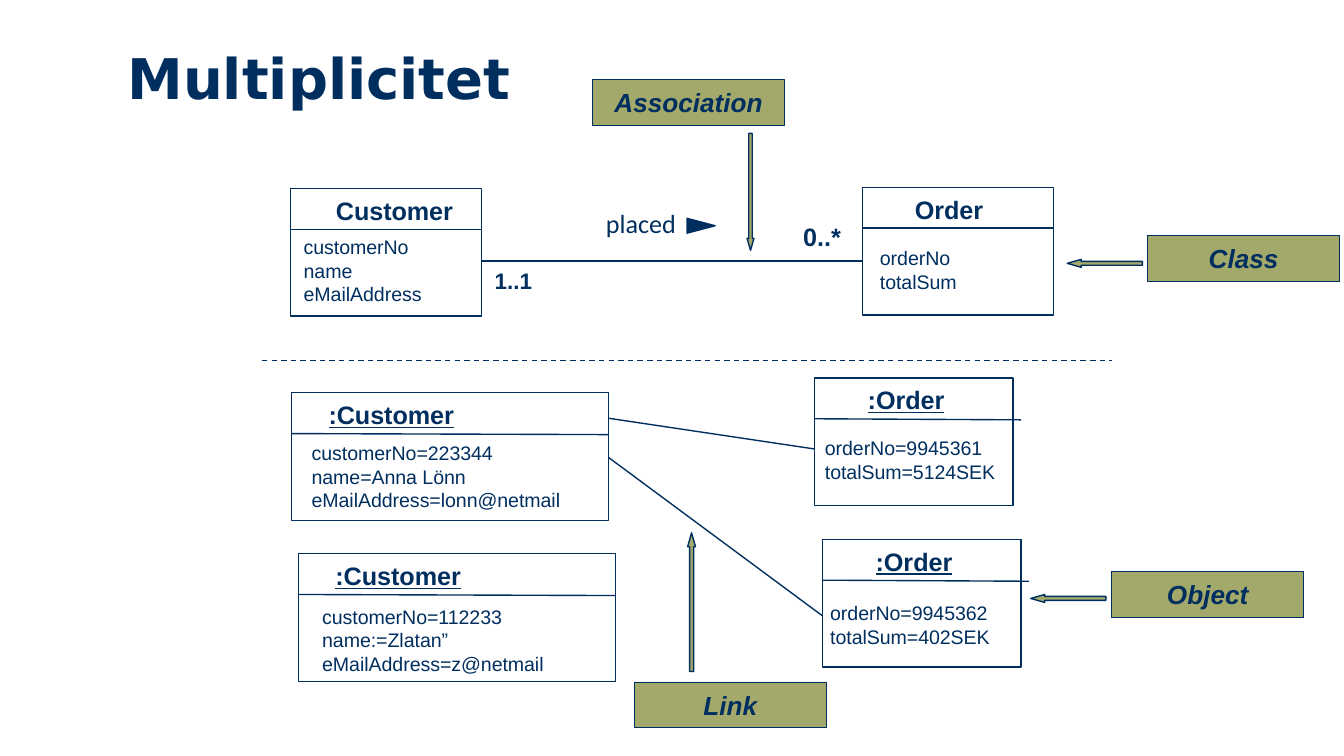
from dataclasses import dataclass

from lxml import etree
from pptx import Presentation
from pptx import util as u
from pptx.dml.color import RGBColor
from pptx.enum import dml, shapes, text
from pptx.oxml import ns


@dataclass(frozen=True)
class Theme:
    """Colours, fonts and type sizes of the slide."""
    ink: RGBColor = RGBColor(0x00, 0x2F, 0x5F)
    paper: RGBColor = RGBColor(0xFF, 0xFF, 0xFF)
    olive: RGBColor = RGBColor(0xA3, 0xA8, 0x6B)
    sans: str = "Arial"
    heading: str = "DejaVu Sans"
    caption: str = "Calibri"
    title: float = 30
    label: float = 14
    name: float = 13.5
    small_name: float = 12
    body: float = 10.5
    line: float = 0.75
    thin: float = 0.25


THEME = Theme()


def add_paragraphs(frame, lines, size, face=THEME.sans, **style):
    """Write one single-run paragraph for each line."""
    for index, line in enumerate(lines):
        para = frame.paragraphs[0] if index == 0 else frame.add_paragraph()
        span = para.add_run()
        span.text = line
        font = span.font
        font.name, font.size = face, u.Pt(size)
        font.color.rgb = THEME.ink
        for key, value in style.items():
            setattr(font, key, value)


def add_text(page, box, lines, size, wrap=True, **style):
    """Place a text box."""
    frame = page.shapes.add_textbox(*map(u.Cm, box)).text_frame
    frame.word_wrap = wrap
    add_paragraphs(frame, lines, size, **style)


def add_outlined(page, kind, box, fill, width=THEME.line, turn=0):
    """Place a filled shape with an ink outline."""
    shape = page.shapes.add_shape(kind, *map(u.Cm, box))
    shape.shadow.inherit = False
    shape.fill.solid()
    shape.fill.fore_color.rgb = fill
    shape.line.color.rgb = THEME.ink
    shape.line.width = u.Pt(width)
    shape.rotation = turn
    return shape


def add_line(page, start, end, dash=None):
    """Draw a straight ink line."""
    line = page.shapes.add_connector(
        shapes.MSO_CONNECTOR.STRAIGHT, *map(u.Cm, (*start, *end)))
    line.line.color.rgb = THEME.ink
    line.line.width = u.Pt(THEME.line)
    if dash:
        line.line.dash_style = dash
    etree.SubElement(line._element.spPr, ns.qn("a:effectLst"))


def add_classifier(page, box, name, name_box, attributes, offset,
                   overhang=0, slant=0, underline=False):
    """Draw a UML box with a name, a divider and its attributes."""
    left, top, width, height = box
    indent, name_width = name_box
    shift, drop = offset
    divider = top + 0.77
    add_outlined(page, shapes.MSO_SHAPE.RECTANGLE, box, THEME.paper)
    add_line(page, (left, divider), (left + width + overhang, divider + slant))
    add_text(page, (left + indent, top, name_width, 0.84), [name], THEME.name,
             bold=True, underline=underline)
    add_text(page, (left + shift, top + drop, width + 0.2, height - drop),
             attributes, THEME.body)


def add_callout(page, box, label, arrow_box, turn=0):
    """Draw an olive label and the arrow that points from it."""
    shape = add_outlined(page, shapes.MSO_SHAPE.RECTANGLE, box, THEME.olive, THEME.thin)
    frame = shape.text_frame
    frame.vertical_anchor = text.MSO_ANCHOR.MIDDLE
    add_paragraphs(frame, [label], THEME.label, bold=True, italic=True)
    frame.paragraphs[0].alignment = text.PP_ALIGN.CENTER
    arrow = add_outlined(page, shapes.MSO_SHAPE.LEFT_ARROW, arrow_box,
                         THEME.olive, turn=turn)
    arrow.adjustments[0], arrow.adjustments[1] = 0.5, 1.76


def add_class_level(page, box):
    """Draw the two classes and the association between them."""
    left, top, width, height = box
    side = 3.61
    right = left + width - side
    axis = top + 1.39
    add_classifier(page, (left, top + 0.02, side, height), "Customer", (0.61, 3.76),
                   ["customerNo", "name", "eMailAddress"], (0, 0.76))
    add_classifier(page, (right, top, side, height), "Order", (0.74, 2.11),
                   ["orderNo", "totalSum"], (0.08, 0.99))
    add_line(page, (left + side, axis), (right, axis))
    add_text(page, (left + side, axis, 1.22, 0.76), ["1..1"], THEME.small_name,
             wrap=False, bold=True)
    add_text(page, (right - 1.37, top + 0.51, 1.24, 0.84), ["0..*"], THEME.name,
             wrap=False, bold=True)
    add_text(page, (left + 5.71, top + 0.25, 4.39, 0.86), ["placed"], THEME.label,
             face=THEME.caption)
    add_outlined(page, shapes.MSO_SHAPE.ISOSCELES_TRIANGLE,
                 (left + 7.62, top + 0.46, 0.28, 0.53), THEME.ink, turn=90)


def add_object_level(page, box):
    """Draw the objects and the links between them."""
    left, top, width, height = box
    right = left + width - 3.91
    customer_edge = left + 5.99
    customers = [
        (0, 0.28, ["customerNo=223344", "name=Anna Lönn",
                   "eMailAddress=lonn@netmail"], (0.13, 0.79)),
        (0.13, 3.32, ["customerNo=112233", "name:=Zlatan”",
                      "eMailAddress=z@netmail"], (0.2, 0.84)),
    ]
    orders = [
        (0, 0, ["orderNo=9945361", "totalSum=5124SEK"], (-0.05, 0.97)),
        (0.15, 3.05, ["orderNo=9945362", "totalSum=402SEK"], (-0.1, 1.04)),
    ]
    for x, y, attributes, offset in customers:
        add_classifier(page, (left + x, top + y, 5.99, height), ":Customer",
                       (0.45, 3.2), attributes, offset, slant=0.02, underline=True)
    for x, y, attributes, offset in orders:
        add_classifier(page, (right + x, top + y, 3.76, height), ":Order",
                       (0.76, 2.11), attributes, offset, overhang=0.15,
                       slant=0.02, underline=True)
    add_line(page, (customer_edge, top + 0.76), (right, top + 1.34))
    add_line(page, (customer_edge, top + 1.5), (right + 0.15, top + 4.49))


def add_callouts(page):
    """Place the four labels that name the parts of the diagram."""
    size = (3.63, 0.86)
    add_callout(page, (11.99, 12.88, *size), "Link", (11.76, 11.3, 2.62, 0.15), 90)
    add_callout(page, (21.01, 10.8, *size), "Object", (19.48, 11.23, 1.42, 0.15))
    add_callout(page, (21.69, 4.45, *size), "Class", (20.17, 4.9, 1.42, 0.15))
    add_callout(page, (11.2, 1.5, *size), "Association", (13.08, 3.56, 2.21, 0.13), 270)


def main():
    """Build and save the deck."""
    deck = Presentation()
    deck.slide_width, deck.slide_height = u.Cm(25.4), u.Cm(14.28)
    page = deck.slides.add_slide(deck.slide_layouts[6])
    add_text(page, (2.16, 0.69, 18.21, 2.39), ["Multiplicitet"], THEME.title,
             face=THEME.heading, bold=True)
    add_class_level(page, (5.49, 3.54, 14.42, 2.41))
    add_line(page, (4.95, 6.81), (21.01, 6.81), dml.MSO_LINE.DASH)
    add_object_level(page, (5.51, 7.14, 13.79, 2.41))
    add_callouts(page)
    deck.save("out.pptx")


if __name__ == "__main__":
    main()
